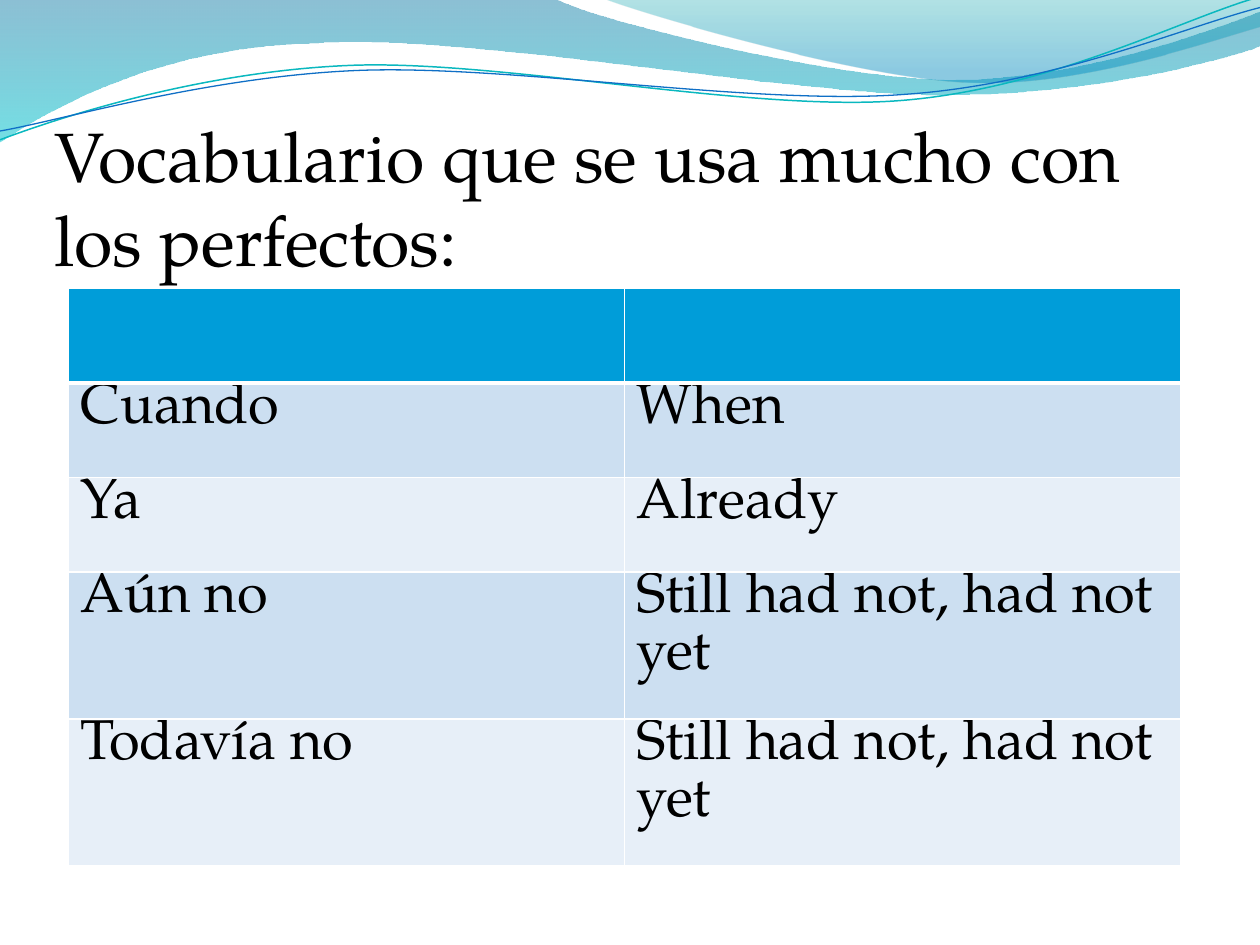
from lxml.etree import SubElement
from pptx import Presentation
from pptx.dml.color import RGBColor
from pptx.enum.text import MSO_ANCHOR, MSO_AUTO_SIZE, PP_ALIGN
from pptx.oxml.ns import qn
from pptx.util import Inches, Pt

FONT = "TeX Gyre Pagella"
WHITE, BLACK, HEADER = "FFFFFF", "000000", "009DD9"
BANDS = ("CCDFF1", "E7EFF8")
TITLE = "Vocabulario que se usa mucho con los perfectos:"
VOCABULARY = [
    ("Cuando", "When"),
    ("Ya", "Already"),
    ("Aún no", "Still had not, had not yet"),
    ("Todavía no", "Still had not, had not yet"),
]
SHORT_ROWS, TALL_ROWS, SHORT_HEIGHT = 3, 2, 0.75

LEFT_WAVE = [
    (0, 0), (4.4, -0.01),
    (4.76, 0.17, 6.64, 0.63, 7.58, 0.63), (8.53, 0.63, 9.58, 0.26, 10, 0.09),
    (10.01, 0.36),
    (9.83, 0.44, 8.7, 0.76, 7.46, 0.75), (6.22, 0.75, 3.82, 0.28, 2.57, 0.34),
    (1.29, 0.36, 0.46, 0.83, -0.01, 1.13),
]
RIGHT_WAVE = [
    (4.79, -0.01),
    (5.09, 0.11, 6.82, 0.62, 7.69, 0.65), (8.56, 0.69, 9.61, 0.32, 10, 0.21),
    (10, 0),
]
TEAL_LINE = [
    (0, 1.11),
    (0.48, 0.93, 1.58, 0.57, 2.77, 0.52), (3.95, 0.47, 5.93, 0.89, 7.13, 0.8),
    (8.33, 0.71, 9.38, 0.15, 9.98, -0.02),
]
BLUE_LINE = [
    (0, 1.04),
    (0.47, 0.96, 1.64, 0.61, 2.83, 0.56), (4.03, 0.51, 5.97, 0.84, 7.17, 0.75),
    (8.36, 0.67, 9.41, 0.21, 10, 0.06),
]


def color(value):
    """Turn a hex string into a colour."""
    return RGBColor.from_string(value)


def bend_segments(shape, outline):
    """Merge each three straight steps of a curved segment into one curve."""
    steps = iter(list(shape._element.spPr.iter(qn("a:lnTo"))))
    for segment in outline[1:]:
        first = next(steps)
        if len(segment) == 6:
            first.tag = qn("a:cubicBezTo")
            for step in (next(steps), next(steps)):
                first.append(step[0])
                step.getparent().remove(step)


def add_outline(page, box, outline, close):
    """Draw an outline whose coordinates start at the corner of the box."""
    left, top = box[:2]
    points = [(Inches(left + x), Inches(top + y))
              for segment in outline
              for x, y in zip(segment[::2], segment[1::2])]
    builder = page.shapes.build_freeform(*points[0])
    builder.add_line_segments(points[1:], close=False)
    shape = builder.convert_to_shape()
    steps = shape._element.spPr.find(".//" + qn("a:path"))
    bend_segments(shape, outline)
    if close:
        SubElement(steps, qn("a:close"))
    shape.shadow.inherit = False
    return shape


def add_wave(page, box, outline, stops):
    """Add a wave with a translucent gradient running downwards."""
    shape = add_outline(page, box, outline, True)
    shape.line.fill.background()
    shape.fill.gradient()
    shape.fill.gradient_angle = 270
    for stop, (position, value, _) in zip(shape.fill.gradient_stops, stops):
        stop.position = position
        stop.color.rgb = color(value)
    tints = list(shape._element.spPr.iter(qn("a:srgbClr")))
    for tint, (_, _, opacity) in zip(tints, stops):
        SubElement(tint, qn("a:alpha"), val=str(opacity * 1000))


def add_wave_line(page, box, outline, value, width):
    """Add a thin curved line."""
    shape = add_outline(page, box, outline, False)
    shape.fill.background()
    shape.line.color.rgb = color(value)
    shape.line.width = Pt(width)


def add_wave_band(page, box):
    """Decorate the top of the page with waves and lines."""
    add_wave(page, box, LEFT_WAVE, [(0, "0074A1", 45), (1, "00C6CF", 55)])
    add_wave(page, box, RIGHT_WAVE, [(0, "00A1A9", 30), (0.8, "008BBF", 45)])
    add_wave_line(page, box, TEAL_LINE, "0AB8BF", 0.85)
    add_wave_line(page, box, BLUE_LINE, "0F6FC6", 0.75)


def style_paragraph(para, size):
    """Set the font of a paragraph and align it left."""
    para.alignment = PP_ALIGN.LEFT
    para.font.name = FONT
    para.font.size = Pt(size)
    para.font.bold = False
    para.font.color.rgb = color(BLACK)


def place_title(page, box):
    """Move and format the title placeholder."""
    title = page.shapes.title
    title.left, title.top, title.width, title.height = map(Inches, box)
    frame = title.text_frame
    frame.text = TITLE
    frame.word_wrap = True
    frame.auto_size = MSO_AUTO_SIZE.NONE
    frame.vertical_anchor = MSO_ANCHOR.BOTTOM
    style_paragraph(frame.paragraphs[0], 40)


def paint_cell(cell, value, bottom=1, top=1):
    """Fill a cell and give it white borders."""
    properties = cell._tc.get_or_add_tcPr()
    for side, width in (("L", 1), ("R", 1), ("T", top), ("B", bottom)):
        border = SubElement(properties, qn(f"a:ln{side}"), w=str(Pt(width)))
        SubElement(SubElement(border, qn("a:solidFill")), qn("a:srgbClr"), val=WHITE)
    cell.fill.solid()
    cell.fill.fore_color.rgb = color(value)


def add_vocabulary(page, box):
    """Add the table of words and their translations."""
    tall_height = (box[3] - SHORT_ROWS * SHORT_HEIGHT) / TALL_ROWS
    heights = [SHORT_HEIGHT] * SHORT_ROWS + [tall_height] * TALL_ROWS
    table = page.shapes.add_table(len(heights), 2, *map(Inches, box)).table
    for column in table.columns:
        column.width = Inches(box[2] / 2)
    for row, height in zip(table.rows, heights):
        row.height = Inches(height)
    for cell in table.rows[0].cells:
        paint_cell(cell, HEADER, bottom=3)
    for number, words in enumerate(VOCABULARY, 1):
        for cell, word in zip(table.rows[number].cells, words):
            paint_cell(cell, BANDS[(number - 1) % 2], top=3 if number == 1 else 1)
            cell.text = word
            cell.margin_top = cell.margin_bottom = 0
            style_paragraph(cell.text_frame.paragraphs[0], 32)


def main():
    """Build the deck and save it."""
    deck = Presentation()
    deck.slide_width, deck.slide_height = Inches(10), Inches(7.5)
    page = deck.slides.add_slide(deck.slide_layouts[5])
    add_wave_band(page, (0, 0, 10, 1.14))
    place_title(page, (0.33, 0.83, 9.25, 1.45))
    add_vocabulary(page, (0.54, 2.29, 8.83, 4.58))
    deck.save("out.pptx")


if __name__ == "__main__":
    main()
